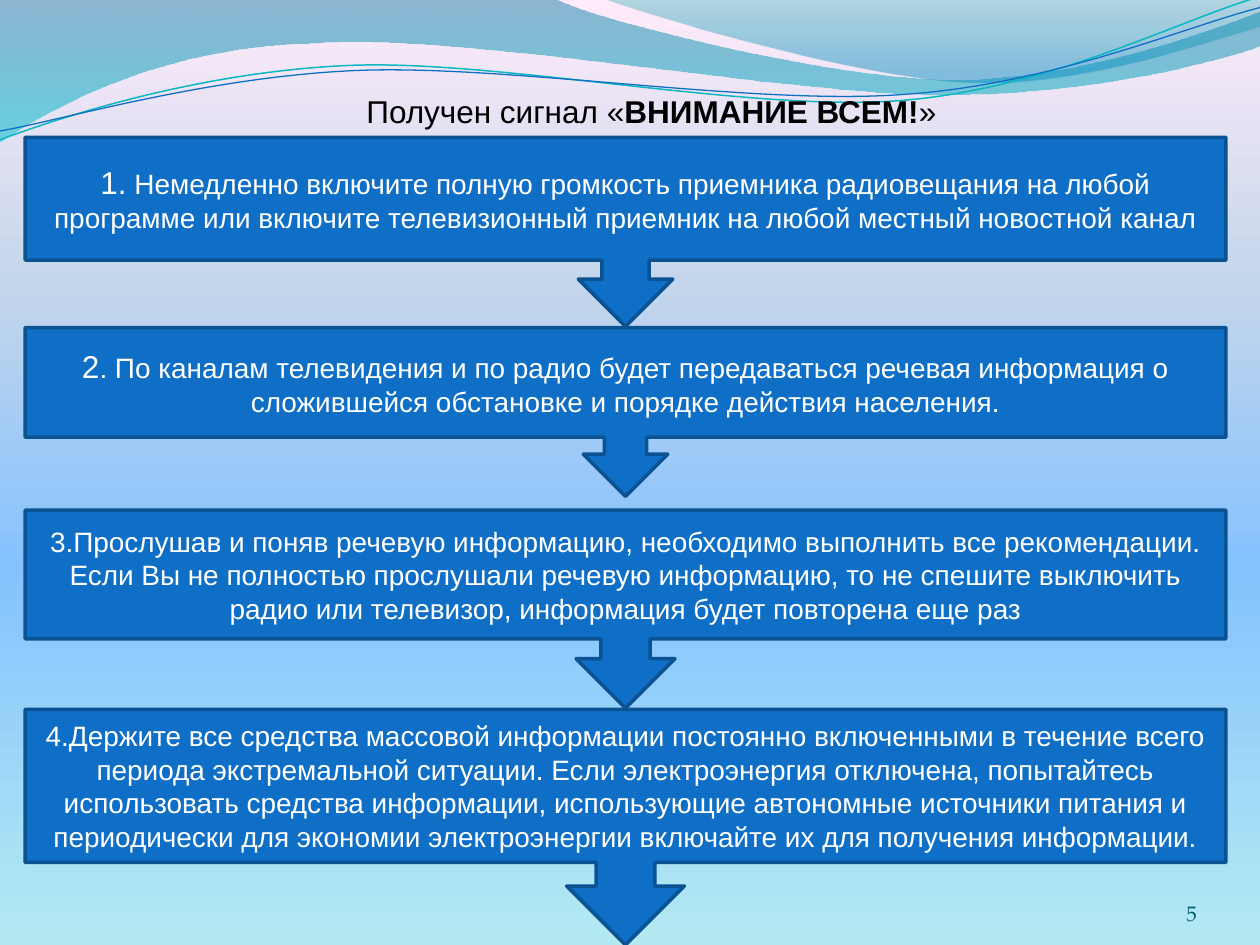
import pptx
import pptx.util
import pptx.dml.color
import pptx.enum.shapes
import pptx.enum.text
import pptx.oxml
import pptx.oxml.ns
import lxml.etree

Inches = pptx.util.Inches
Pt = pptx.util.Pt
RGB = pptx.dml.color.RGBColor
Align = pptx.enum.text.PP_ALIGN
Anchor = pptx.enum.text.MSO_ANCHOR
qn = pptx.oxml.ns.qn

BLUE = RGB(0x0F, 0x6F, 0xC6)
NAVY = RGB(0x0B, 0x52, 0x92)
TEAL = RGB(0x0A, 0xB8, 0xBF)
DEEP = RGB(0x04, 0x5D, 0x75)
WHITE = RGB(0xFF, 0xFF, 0xFF)
BLACK = RGB(0, 0, 0)
SKY = [(0, RGB(0xB3, 0xEA, 0xF2), 100), (40, RGB(0x85, 0xC2, 0xFF), 100),
       (70, RGB(0xC4, 0xD6, 0xEB), 100), (100, RGB(0xFF, 0xEB, 0xFA), 100)]
WASH = [(0, RGB(0x00, 0x74, 0xA1), 45), (100, RGB(0x00, 0xC6, 0xCF), 55)]
GLOW = [(0, RGB(0x00, 0xA1, 0xA9), 30), (80, RGB(0x00, 0x8B, 0xBF), 45)]

WAVES = [
    (WASH, [(0, 0), (4.4, -0.01), (4.76, 0.17, 6.64, 0.63, 7.58, 0.63),
            (8.53, 0.63, 9.58, 0.26, 10, 0.09), (10.01, 0.36),
            (9.83, 0.44, 8.7, 0.76, 7.46, 0.75),
            (6.22, 0.75, 3.82, 0.28, 2.57, 0.34),
            (1.29, 0.36, 0.46, 0.83, -0.01, 1.13), (0, 0)]),
    (GLOW, [(4.79, -0.01), (5.09, 0.11, 6.82, 0.62, 7.69, 0.65),
            (8.56, 0.69, 9.61, 0.32, 10, 0.21), (10, 0), (4.79, -0.01)]),
]
LINES = [
    (TEAL, 0.85, [(0, 1.11), (0.48, 0.93, 1.58, 0.57, 2.77, 0.52),
                  (3.95, 0.47, 5.93, 0.89, 7.13, 0.8),
                  (8.33, 0.71, 9.38, 0.15, 9.98, -0.02)]),
    (BLUE, 0.75, [(0, 1.04), (0.47, 0.96, 1.64, 0.61, 2.83, 0.56),
                  (4.03, 0.51, 5.97, 0.84, 7.17, 0.75),
                  (8.36, 0.67, 9.41, 0.21, 10, 0.06)]),
]
STEPS = [
    (1.09, 1.5, "1.", " Немедленно включите полную громкость приемника радиовещания на любой "
     "программе или включите телевизионный приемник на любой местный новостной канал"),
    (2.6, 1.34, "2", ". По каналам телевидения и по радио будет передаваться речевая "
     "информация о сложившейся обстановке и порядке действия населения."),
    (4.05, 1.57, "", "3.Прослушав и поняв речевую информацию, необходимо выполнить все "
     "рекомендации. Если Вы не полностью прослушали речевую информацию, то не спешите "
     "выключить радио или телевизор, информация будет повторена еще раз"),
    (5.63, 1.87, "", "4.Держите все средства массовой информации постоянно включенными в "
     "течение всего периода экстремальной ситуации. Если электроэнергия отключена, "
     "попытайтесь использовать средства информации, использующие автономные источники "
     "питания и периодически для экономии электроэнергии включайте их для получения "
     "информации."),
]


def blend(fill, root, stops, angle):
    fill.gradient()
    grad = root.find(".//" + qn("a:gradFill"))
    marks = "".join(
        f'<a:gs pos="{pos * 1000}"><a:srgbClr val="{tint}">'
        f'<a:alpha val="{alpha * 1000}"/></a:srgbClr></a:gs>'
        for pos, tint, alpha in stops)
    fresh = pptx.oxml.parse_xml(
        f'<a:gradFill {pptx.oxml.ns.nsdecls("a")} rotWithShape="1">'
        f'<a:gsLst>{marks}</a:gsLst><a:lin ang="{angle * 60000}" scaled="0"/></a:gradFill>')
    grad.getparent().replace(grad, fresh)


def bend(curve, route):
    legs = iter(curve.element.findall(".//" + qn("a:lnTo")))
    for step in route[1:]:
        group = [next(legs) for _ in range(len(step) // 2)]
        if len(group) == 3:
            arc = lxml.etree.Element(qn("a:cubicBezTo"))
            group[0].addprevious(arc)
            for leg in group:
                arc.append(leg[0])
                leg.getparent().remove(leg)


def add_curve(slide, route, close):
    dots = [(Inches(step[i]), Inches(step[i + 1]))
            for step in route for i in range(0, len(step), 2)]
    pen = slide.shapes.build_freeform(*dots[0])
    pen.add_line_segments(dots[1:], close=close)
    curve = pen.convert_to_shape()
    bend(curve, route)
    curve.shadow.inherit = False
    return curve


def add_wave(slide, stops, route):
    wave = add_curve(slide, route, True)
    blend(wave.fill, wave.element, stops, 90)
    wave.line.fill.background()


def add_line(slide, tint, width, route):
    line = add_curve(slide, route, False)
    line.fill.background()
    line.line.color.rgb = tint
    line.line.width = Pt(width)


def set_font(font, size, tint, name="Arial"):
    font.name = name
    font.size = Pt(size)
    font.color.rgb = tint


def add_title(slide):
    title = slide.shapes.title
    title.left, title.top, title.width, title.height = map(Inches, (0.88, 0.68, 8.58, 0.4))
    frame = title.text_frame
    frame.vertical_anchor = Anchor.TOP
    frame.auto_size = pptx.enum.text.MSO_AUTO_SIZE.NONE
    para = frame.paragraphs[0]
    para.alignment = Align.CENTER
    set_font(para.font, 18, BLACK)
    for text, bold in (("Получен сигнал «", False), ("ВНИМАНИЕ ВСЕМ!", True), ("»", False)):
        run = para.add_run()
        run.text = text
        run.font.bold = bold
    title.element.getparent().append(title.element)


def add_step(slide, top, height, mark, text):
    box = slide.shapes.add_shape(
        pptx.enum.shapes.MSO_SHAPE.DOWN_ARROW_CALLOUT,
        Inches(0.2), Inches(top), Inches(9.53), Inches(height))
    box.shadow.inherit = False
    box.fill.solid()
    box.fill.fore_color.rgb = BLUE
    box.line.color.rgb = NAVY
    box.line.width = Pt(2)
    box.text_frame.vertical_anchor = Anchor.MIDDLE
    para = box.text_frame.paragraphs[0]
    para.alignment = Align.CENTER
    set_font(para.font, 16, WHITE)
    if mark:
        lead = para.add_run()
        lead.text = mark
        lead.font.size = Pt(18)
    para.add_run().text = text


def add_page(slide):
    box = slide.shapes.add_textbox(*map(Inches, (8.67, 6.95, 0.83, 0.4)))
    frame = box.text_frame
    frame.word_wrap = True
    frame.margin_left = frame.margin_right = frame.margin_top = frame.margin_bottom = 0
    frame.vertical_anchor = Anchor.BOTTOM
    para = frame.paragraphs[0]
    para.text = "5"
    para.alignment = Align.RIGHT
    set_font(para.font, 12, DEEP, "TeX Gyre Pagella")


def main():
    deck = pptx.Presentation()
    deck.slide_width, deck.slide_height = Inches(10), Inches(7.5)
    slide = deck.slides.add_slide(deck.slide_layouts[5])
    blend(slide.background.fill, slide.element, SKY, 270)
    for wave in WAVES:
        add_wave(slide, *wave)
    for line in LINES:
        add_line(slide, *line)
    add_page(slide)
    add_title(slide)
    for step in STEPS:
        add_step(slide, *step)
    deck.save("out.pptx")


if __name__ == "__main__":
    main()
